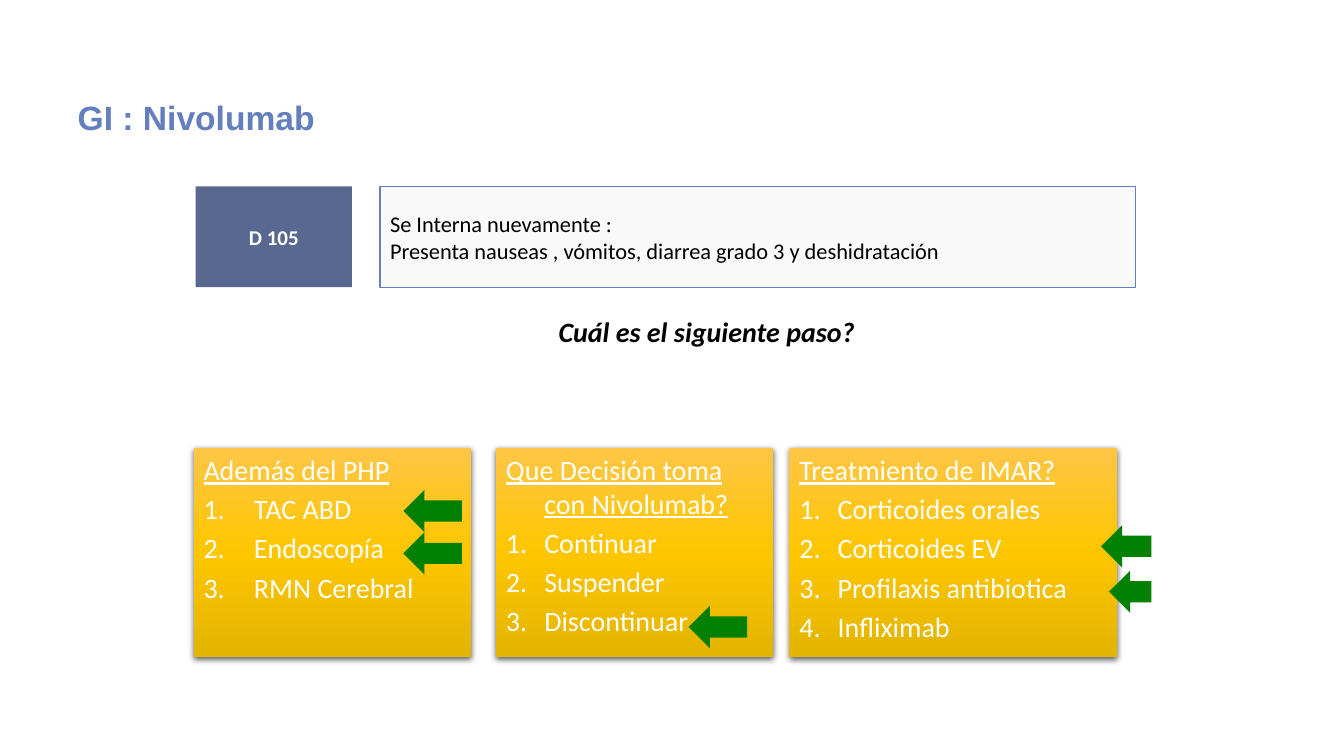
import pptx
import pptx.util
import pptx.dml.color
import pptx.enum.shapes
import pptx.enum.text
import pptx.oxml
import pptx.oxml.ns

Inches = pptx.util.Inches
Pt = pptx.util.Pt
SHAPE = pptx.enum.shapes.MSO_SHAPE
ALIGN = pptx.enum.text.PP_ALIGN
ANCHOR = pptx.enum.text.MSO_ANCHOR
NS = pptx.oxml.ns.nsdecls("a")


def color(code):
    return pptx.dml.color.RGBColor.from_string(code)


def write(frame, text, size=20, ink="FFFFFF", font="Calibri", bold=False,
          italic=False, under=False, align=ALIGN.LEFT, hang=0, before=0,
          number=False):
    """Add a paragraph, filling the empty first one if there is one."""
    para = frame.paragraphs[0] if not frame.text else frame.add_paragraph()
    para.alignment = align
    para.space_before = Pt(before)
    props = para._p.get_or_add_pPr()
    props.set("marL", str(Inches(hang)))
    props.set("indent", str(-Inches(hang)))
    if number:
        props.append(pptx.oxml.parse_xml(
            f'<a:buClr {NS}><a:srgbClr val="{ink}"/></a:buClr>'))
        props.append(pptx.oxml.parse_xml(
            f'<a:buAutoNum {NS} type="arabicPeriod"/>'))
    run = para.add_run()
    run.text = text
    run.font.name, run.font.size = font, Pt(size)
    run.font.bold, run.font.italic, run.font.underline = bold, italic, under
    run.font.color.rgb = color(ink)
    return para


deck = pptx.Presentation()
deck.slide_width, deck.slide_height = Inches(13.33), Inches(7.5)
slide = deck.slides.add_slide(deck.slide_layouts[5])
shapes = slide.shapes

# Title
title = shapes.title
title.left, title.top = Inches(0.67), Inches(1.01)
title.width, title.height = Inches(10.95), Inches(0.36)
title.text_frame.vertical_anchor = ANCHOR.MIDDLE
title.text_frame.auto_size = pptx.enum.text.MSO_AUTO_SIZE.NONE
head = write(title.text_frame, "GI : Nivolumab", size=24, ink="647FBE",
             font="Arial", bold=True)
head.line_spacing = 0.9

# Day and event
day = shapes.add_shape(SHAPE.RECTANGLE, Inches(1.94), Inches(1.85),
                       Inches(1.55), Inches(1))
event = shapes.add_shape(SHAPE.RECTANGLE, Inches(3.77), Inches(1.85),
                         Inches(7.49), Inches(1))
for box, fill in ((day, "596890"), (event, "F9F9F9")):
    box.shadow.inherit = False
    box.fill.solid()
    box.fill.fore_color.rgb = color(fill)
    box.text_frame.word_wrap = True
    box.text_frame.vertical_anchor = ANCHOR.MIDDLE
day.line.fill.background()
event.line.color.rgb = color("647FBE")
event.line.width = Pt(1)
write(day.text_frame, "D 105", size=15, bold=True, align=ALIGN.CENTER)
for line in ("Se Interna nuevamente :",
             "Presenta nauseas , vómitos, diarrea grado 3 y deshidratación"):
    write(event.text_frame, line, size=16, ink="000000", hang=0.2)

# Question
ask = shapes.add_textbox(Inches(3.98), Inches(3.07), Inches(6.06), Inches(0.44))
ask.text_frame.word_wrap = True
write(ask.text_frame, "Cuál es el siguiente paso?", ink="000000", bold=True,
      italic=True, align=ALIGN.CENTER)

# Option cards: left, width, hanging indent of the list, heading, options
cards = [
    (1.92, 2.75, 0.5, "Además del PHP",
     ["TAC ABD", "Endoscopía", "RMN Cerebral"]),
    (4.92, 2.75, 0.38, "Que Decisión toma con Nivolumab?",
     ["Continuar", "Suspender", "Discontinuar"]),
    (7.83, 3.25, 0.38, "Treatmiento de IMAR?",
     ["Corticoides orales", "Corticoides EV", "Profilaxis antibiotica",
      "Infliximab"]),
]
stops = "".join(
    f'<a:gs pos="{pos}"><a:srgbClr val="{code}"/></a:gs>'
    for pos, code in ((0, "FFC647"), (50000, "FFC600"), (100000, "E3B400")))
for left, width, hang, heading, options in cards:
    card = shapes.add_shape(SHAPE.RECTANGLE, Inches(left), Inches(4.44),
                            Inches(width), Inches(2.08))
    card.line.fill.background()
    card.shadow.inherit = False
    props = card._element.spPr
    props.find(pptx.oxml.ns.qn("a:ln")).addprevious(pptx.oxml.parse_xml(
        f'<a:gradFill {NS} rotWithShape="1"><a:gsLst>{stops}</a:gsLst>'
        '<a:lin ang="5400000" scaled="0"/></a:gradFill>'))
    props.find(pptx.oxml.ns.qn("a:effectLst")).append(pptx.oxml.parse_xml(
        f'<a:outerShdw {NS} blurRad="{Pt(4.5)}" dist="{Pt(1.5)}" '
        'dir="5400000" algn="ctr" rotWithShape="0"><a:srgbClr val="000000">'
        '<a:alpha val="63000"/></a:srgbClr></a:outerShdw>'))
    frame = card.text_frame
    frame.word_wrap = True
    frame.vertical_anchor = ANCHOR.TOP
    write(frame, heading, under=True, hang=0.38)
    for option in options:
        write(frame, option, hang=hang, before=4, number=True)

# Arrows at the right answers
for left, top, width in ((4, 4.86, 0.58), (4, 5.28, 0.58), (6.83, 6.01, 0.58),
                         (10.92, 5.21, 0.5), (11, 5.66, 0.42)):
    arrow = shapes.add_shape(SHAPE.LEFT_ARROW, Inches(left), Inches(top),
                             Inches(width), Inches(0.42))
    arrow.shadow.inherit = False
    arrow.fill.solid()
    arrow.fill.fore_color.rgb = color("008000")
    arrow.line.fill.background()

deck.save("out.pptx")
